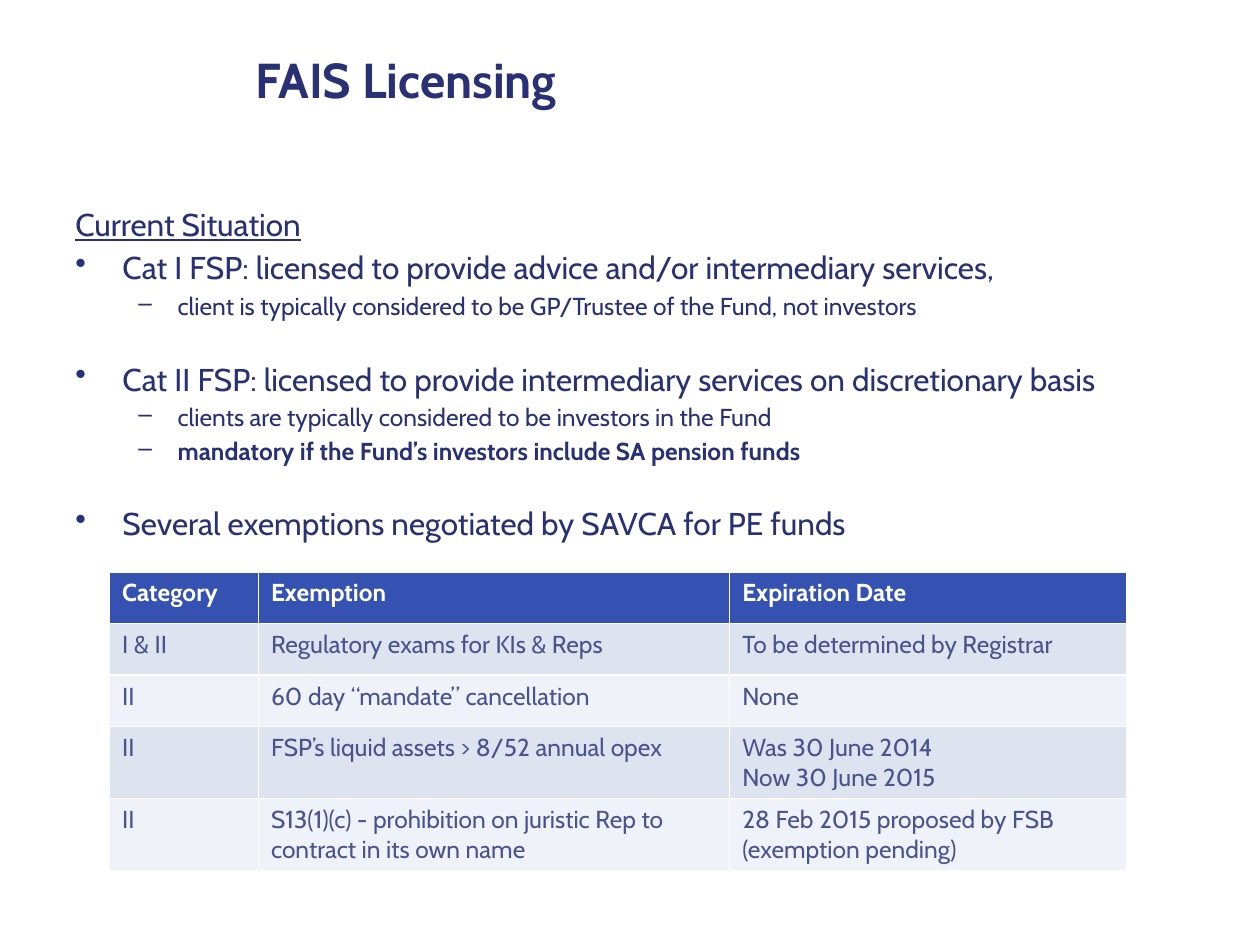
from lxml import etree
from pptx import Presentation
from pptx import util as u
from pptx.dml import color
from pptx.enum import text
from pptx.oxml import ns

FONT = "Cabin"
NAVY, BLUE, SLATE, WHITE = "293074", "3552B2", "4A548C", "FFFFFF"
BANDS = ("DEE3F0", "EFF2F8")
GROUP_GAP = 22.6

# Bullet, left margin and hanging indent (cm), text size, space before (pt)
LEVELS = {
    "heading": (None, 0, 0, 18, 0),
    "point": ("•", 0.95, 0.95, 18, 3.2),
    "detail": ("–", 2.06, 0.79, 14, 2.5),
}

# Level, wording, and any settings that differ from the level's own
SITUATION = [
    ("heading", "Current Situation", {"underline": True}),
    ("point", "Cat I FSP: licensed to provide advice and/or intermediary services,", {}),
    ("detail", "client is typically considered to be GP/Trustee of the Fund, not investors", {}),
    ("point", "Cat II FSP: licensed to provide intermediary services on discretionary basis",
     {"before": GROUP_GAP}),
    ("detail", "clients are typically considered to be investors in the Fund", {}),
    ("detail", "mandatory if the Fund’s investors include SA pension funds", {"bold": True}),
    ("point", "Several exemptions negotiated by SAVCA for PE funds", {"before": GROUP_GAP}),
]

EXEMPTIONS = [
    ("Category", "Exemption", "Expiration Date"),
    ("I & II", "Regulatory exams for KIs & Reps", "To be determined by Registrar"),
    ("II", "60 day “mandate” cancellation", "None"),
    ("II", "FSP’s liquid assets > 8/52 annual opex", "Was 30 June 2014\nNow 30 June 2015"),
    ("II", "S13(1)(c) - prohibition on juristic Rep to contract in its own name",
     "28 Feb 2015 proposed by FSB\n(exemption pending)"),
]


def rgb(value):
    return color.RGBColor.from_string(value)


class SlideWriter:
    """Holds the text style and the slide being filled."""

    def __init__(self, slide, font_name):
        self.slide = slide
        self.font_name = font_name

    def style(self, paragraph, size, colour, bold=False, underline=False):
        font = paragraph.font
        font.name, font.size = self.font_name, u.Pt(size)
        font.bold, font.underline = bold, underline
        font.color.rgb = rgb(colour)

    def text_frame(self, left, top, width, height):
        box = self.slide.shapes.add_textbox(u.Cm(left), u.Cm(top), u.Cm(width), u.Cm(height))
        box.text_frame.word_wrap = True
        return box.text_frame

    def title(self, wording, *place):
        frame = self.text_frame(*place)
        frame.vertical_anchor = text.MSO_ANCHOR.MIDDLE
        frame.text = wording
        self.style(frame.paragraphs[0], 28, NAVY, bold=True)

    def bullet(self, paragraph, mark, margin, hanging):
        properties = paragraph._p.get_or_add_pPr()
        properties.set("marL", str(u.Cm(margin)))
        properties.set("indent", str(-u.Cm(hanging)))
        etree.SubElement(properties, ns.qn("a:buChar")).set("char", mark)

    def outline(self, items, *place):
        frame = self.text_frame(*place)
        for index, (level, wording, changes) in enumerate(items):
            mark, margin, hanging, size, before = LEVELS[level]
            paragraph = frame.add_paragraph() if index else frame.paragraphs[0]
            paragraph.text = wording
            if mark:
                self.bullet(paragraph, mark, margin, hanging)
            paragraph.space_before = u.Pt(changes.get("before", before))
            self.style(paragraph, size, NAVY, changes.get("bold", False),
                       changes.get("underline", False))

    def table(self, rows, left, top, widths, heights):
        table = self.slide.shapes.add_table(
            len(rows), len(widths), u.Cm(left), u.Cm(top),
            u.Cm(sum(widths)), u.Cm(sum(heights))).table
        for column, width in zip(table.columns, widths):
            column.width = u.Cm(width)
        for index, (row, height, wordings) in enumerate(zip(table.rows, heights, rows)):
            row.height = u.Cm(height)
            header = index == 0
            for cell, wording in zip(row.cells, wordings):
                cell.text = wording
                cell.fill.solid()
                cell.fill.fore_color.rgb = rgb(BLUE if header else BANDS[(index - 1) % 2])
                for paragraph in cell.text_frame.paragraphs:
                    self.style(paragraph, 14, WHITE if header else SLATE, bold=header)


def main():
    presentation = Presentation()
    presentation.slide_width, presentation.slide_height = u.Cm(25.4), u.Cm(19.05)
    slide = presentation.slides.add_slide(presentation.slide_layouts[6])
    writer = SlideWriter(slide, FONT)
    writer.title("FAIS Licensing", 4.9, 0.2, 19.23, 2.77)
    writer.outline(SITUATION, 1.27, 4.01, 22.86, 13.49)
    writer.table(EXEMPTIONS, 2.21, 11.53, widths=(3, 9.5, 8),
                 heights=(1.04, 1.04, 1.04, 1.45, 1.45))
    presentation.save("out.pptx")


if __name__ == "__main__":
    main()
